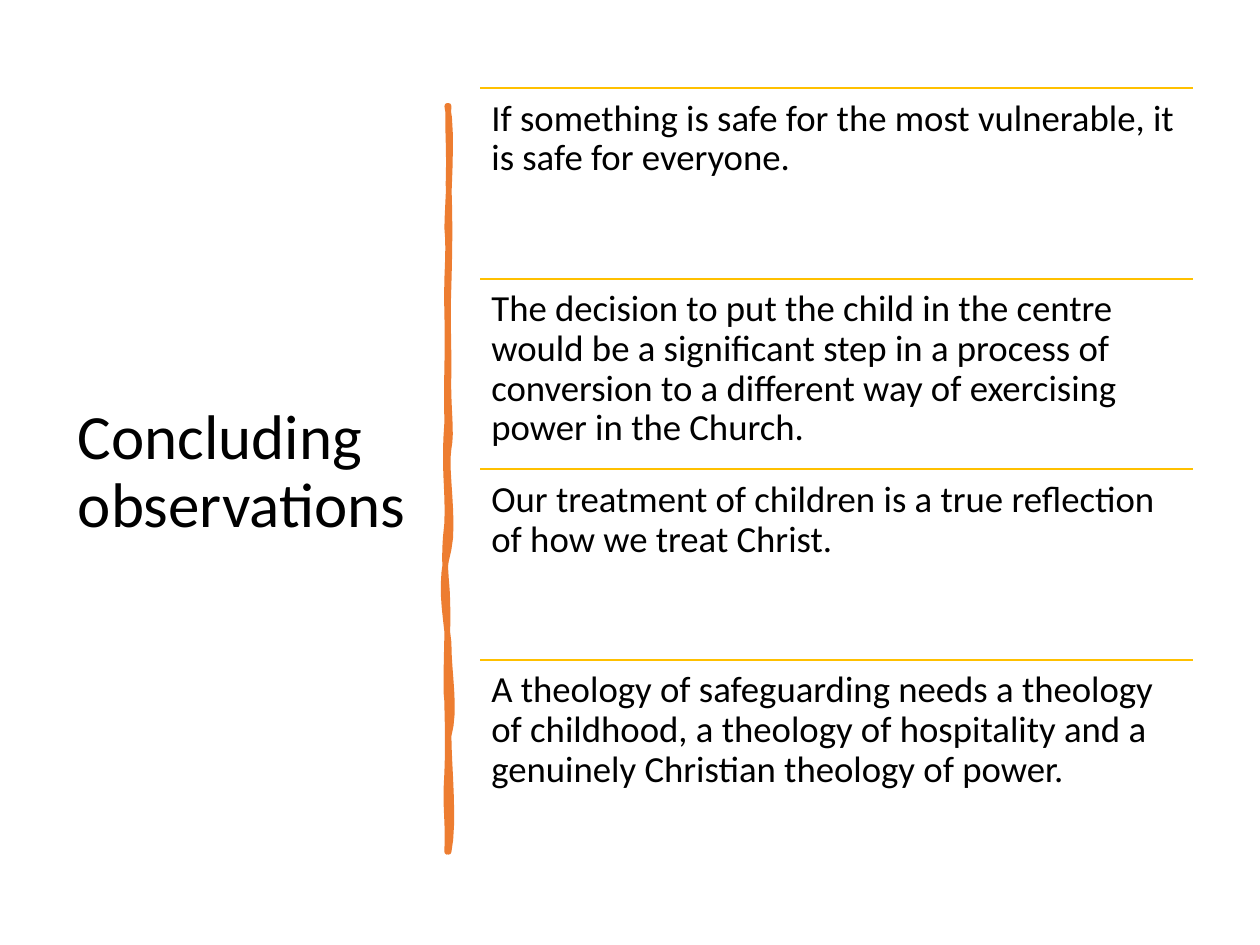
from dataclasses import dataclass

from pptx import Presentation
from pptx.dml.color import RGBColor
from pptx.enum.shapes import MSO_CONNECTOR
from pptx.enum.text import MSO_ANCHOR
from pptx.oxml.ns import qn
from pptx.util import Inches, Pt

STRAIGHT = MSO_CONNECTOR.STRAIGHT
TOP = MSO_ANCHOR.TOP
MIDDLE = MSO_ANCHOR.MIDDLE

COLORS = {"text": "000000", "brush": "ED7D31", "rule": "FFC000"}
FONT = "Calibri"
LIST_LEFT, LIST_TOP, LIST_WIDTH, LIST_HEIGHT = 3.81, 0.7, 5.66, 6.05
BRUSH_START = (3.56, 0.84)
BRUSH_CURVES = [
    (3.55, 1.03, 3.57, 1.16, 3.56, 1.46),
    (3.57, 1.74, 3.57, 1.91, 3.56, 2.26),
    (3.55, 2.58, 3.56, 2.62, 3.56, 2.94),
    (3.55, 3.25, 3.59, 3.42, 3.56, 3.56),
    (3.53, 3.72, 3.61, 4.14, 3.56, 4.36),
    (3.49, 4.62, 3.53, 4.83, 3.56, 5.1),
    (3.56, 5.35, 3.62, 5.63, 3.56, 5.84),
    (3.56, 6.06, 3.61, 6.53, 3.56, 6.76),
    (3.56, 6.75, 3.55, 6.76, 3.55, 6.76),
    (3.56, 6.45, 3.53, 6.44, 3.55, 6.13),
    (3.56, 5.83, 3.55, 5.7, 3.55, 5.57),
    (3.53, 5.46, 3.56, 4.94, 3.55, 4.77),
    (3.55, 4.62, 3.51, 4.47, 3.55, 4.15),
    (3.56, 3.86, 3.52, 3.73, 3.55, 3.35),
    (3.54, 3, 3.56, 2.79, 3.55, 2.5),
    (3.54, 2.16, 3.57, 2.03, 3.55, 1.81),
    (3.55, 1.65, 3.6, 1.04, 3.55, 0.84),
]
OBSERVATIONS = [
    "If something is safe for the most vulnerable, it is safe for everyone.",
    "The decision to put the child in the centre would be a significant step in a "
    "process of conversion to a different way of exercising power in the Church.",
    "Our treatment of children is a true reflection of how we treat Christ.",
    "A theology of safeguarding needs a theology of childhood, a theology of "
    "hospitality and a genuinely Christian theology of power.",
]


@dataclass
class TextBlock:
    """A box of text, measured in inches and points."""
    text: str
    left: float
    top: float
    width: float
    height: float
    size: float
    anchor: MSO_ANCHOR = TOP
    inset_x: float = 0.09
    inset_y: float = 0.09


def rgb(name: str) -> RGBColor:
    """Return a named colour."""
    return RGBColor.from_string(COLORS[name])


def add_text(shapes, block: TextBlock) -> None:
    """Add a wrapped text box."""
    box = (block.left, block.top, block.width, block.height)
    tf = shapes.add_textbox(*map(Inches, box)).text_frame
    frame_format = {
        "word_wrap": True,
        "vertical_anchor": block.anchor,
        "margin_left": Inches(block.inset_x),
        "margin_right": Inches(block.inset_x),
        "margin_top": Inches(block.inset_y),
        "margin_bottom": Inches(block.inset_y),
    }
    for name, value in frame_format.items():
        setattr(tf, name, value)
    p = tf.paragraphs[0]
    p.line_spacing = 0.9
    r = p.add_run()
    r.text = block.text
    for name, value in {"name": FONT, "size": Pt(block.size)}.items():
        setattr(r.font, name, value)
    r.font.color.rgb = rgb("text")


def add_rule(shapes, left: float, top: float, width: float) -> None:
    """Add a thin horizontal rule."""
    ends = (left, top, left + width, top)
    line = shapes.add_connector(STRAIGHT, *map(Inches, ends))
    line.line.color.rgb = rgb("rule")
    line.line.width = Pt(1)
    sp_pr = line._element.spPr
    sp_pr.append(sp_pr.makeelement(qn("a:effectLst"), {}))


def curve_points(start: tuple, curves: list, steps: int = 8) -> list:
    """Return points along a chain of cubic curves."""
    points = []
    x0, y0 = start
    for x1, y1, x2, y2, x3, y3 in curves:
        for i in range(1, steps + 1):
            t = i / steps
            u = 1 - t
            a, b, c, d = u**3, 3 * u * u * t, 3 * u * t * t, t**3
            points.append((Inches(a * x0 + b * x1 + c * x2 + d * x3),
                           Inches(a * y0 + b * y1 + c * y2 + d * y3)))
        x0, y0 = x3, y3
    return points


def add_brush_stroke(shapes) -> None:
    """Add the hand-drawn vertical divider."""
    builder = shapes.build_freeform(*map(Inches, BRUSH_START))
    builder.add_line_segments(curve_points(BRUSH_START, BRUSH_CURVES), close=True)
    sp = builder.convert_to_shape()
    sp.shadow.inherit = False
    sp.fill.solid()
    sp.fill.fore_color.rgb = rgb("brush")
    sp.line.color.rgb = rgb("brush")
    sp.line.width = Pt(3.25)


def main() -> None:
    """Build and save the slide."""
    prs = Presentation()
    prs.slide_width, prs.slide_height = Inches(10), Inches(7.5)
    s = prs.slides.add_slide(prs.slide_layouts[6])
    add_text(s.shapes, TextBlock("Concluding observations", 0.52, 0.7, 2.8, 6.11,
                                 36, MIDDLE, 0.1, 0.05))
    add_brush_stroke(s.shapes)
    group = s.shapes.add_group_shape()
    row_height = LIST_HEIGHT / len(OBSERVATIONS)
    for i, text in enumerate(OBSERVATIONS):
        top = LIST_TOP + i * row_height
        add_rule(group.shapes, LIST_LEFT, top, LIST_WIDTH)
        add_text(group.shapes, TextBlock(text, LIST_LEFT, top, LIST_WIDTH, row_height, 21))
    prs.save("out.pptx")


if __name__ == "__main__":
    main()
